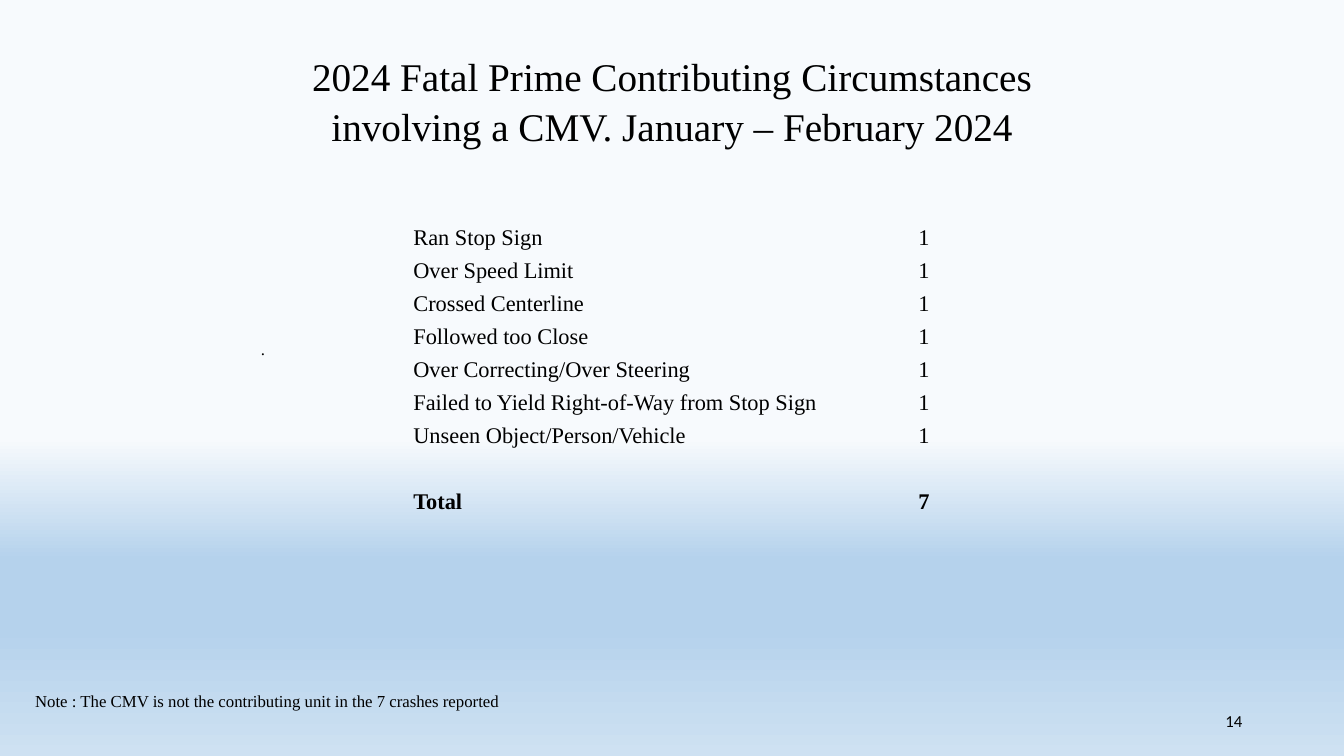
"""Build the slide of 2024 fatal contributing circumstances involving a CMV."""
from lxml.etree import SubElement
from pptx import Presentation
from pptx.dml.color import RGBColor
from pptx.enum.text import MSO_ANCHOR, PP_ALIGN
from pptx.oxml.ns import qn
from pptx.util import Inches, Pt


def write(paragraph, text, size, font="Times New Roman", color="000000", bold=False):
    run = paragraph.add_run()
    run.text = text
    formats = {"size": Pt(size), "name": font, "bold": bold}
    for name, value in formats.items():
        setattr(run.font, name, value)
    run.font.color.rgb = RGBColor.from_string(color)


presentation = Presentation()
presentation.slide_width = Inches(13.33)
presentation.slide_height = Inches(7.5)
slide = presentation.slides.add_slide(presentation.slide_layouts[6])

background = slide.background.fill
background.gradient()
background.gradient_angle = 270
stops = slide.element.find(".//" + qn("a:gsLst"))
for stop in list(stops):
    stops.remove(stop)
for percent, color in [(58, "F7FAFD"), (74, "B5D2EC"), (83, "B5D2EC"), (100, "CEE1F2")]:
    stop = SubElement(stops, qn("a:gs"), pos=str(percent * 1000))
    SubElement(stop, qn("a:srgbClr"), val=color)

title = "2024 Fatal Prime Contributing Circumstances involving a CMV. January – February 2024"
note = "Note : The CMV is not the contributing unit in the 7 crashes reported"
texts = [
    (title, 2.49, 0.45, 8.35, 1.1, 28, "Times New Roman", PP_ALIGN.CENTER, MSO_ANCHOR.TOP, 1.05),
    (".", 2.49, 3.31, 0.5, 0.3, 12, "Times New Roman", PP_ALIGN.LEFT, MSO_ANCHOR.TOP, 1.0),
    (note, 0.25, 6.8, 4.9, 0.3, 12, "Times New Roman", PP_ALIGN.LEFT, MSO_ANCHOR.TOP, 1.0),
    ("14", 9.42, 6.95, 3, 0.4, 12, "Calibri", PP_ALIGN.RIGHT, MSO_ANCHOR.MIDDLE, 1.0),
]
for text, left, top, width, height, size, font, alignment, anchor, spacing in texts:
    box = slide.shapes.add_textbox(Inches(left), Inches(top), Inches(width), Inches(height))
    frame = box.text_frame
    frame.word_wrap = True
    frame.vertical_anchor = anchor
    paragraph = frame.paragraphs[0]
    paragraph.alignment = alignment
    paragraph.line_spacing = spacing
    write(paragraph, text, size, font)

circumstances = [
    ("Ran Stop Sign", "1"),
    ("Over Speed Limit", "1"),
    ("Crossed Centerline", "1"),
    ("Followed too Close", "1"),
    ("Over Correcting/Over Steering", "1"),
    ("Failed to Yield Right-of-Way from Stop Sign", "1"),
    ("Unseen Object/Person/Vehicle", "1"),
    ("", ""),
    ("Total", "7"),
]
row_height = Inches(2.95 / len(circumstances))
graphic = slide.shapes.add_table(
    len(circumstances), 2, Inches(4.09), Inches(2.16), Inches(5.14), Inches(2.95)
)
table = graphic.table
table.first_row = False
table.horz_banding = False
no_grid_style = "{2D5ABB26-0587-4C30-8999-92F81FD0307C}"
graphic.element.find(".//" + qn("a:tableStyleId")).text = no_grid_style
for column, width in zip(table.columns, [4.2, 0.94]):
    column.width = Inches(width)
cell_format = {
    "vertical_anchor": MSO_ANCHOR.BOTTOM,
    "margin_left": Inches(0.01),
    "margin_right": Inches(0.01),
    "margin_top": Inches(0.01),
    "margin_bottom": 0,
}
for row_index, values in enumerate(circumstances):
    table.rows[row_index].height = row_height
    for column_index, value in enumerate(values):
        cell = table.cell(row_index, column_index)
        for name, setting in cell_format.items():
            setattr(cell, name, setting)
        cell.fill.background()
        paragraph = cell.text_frame.paragraphs[0]
        paragraph.alignment = PP_ALIGN.RIGHT if column_index else PP_ALIGN.LEFT
        if value:
            write(paragraph, value, 16, bold=values[0] == "Total")

presentation.save("out.pptx")
